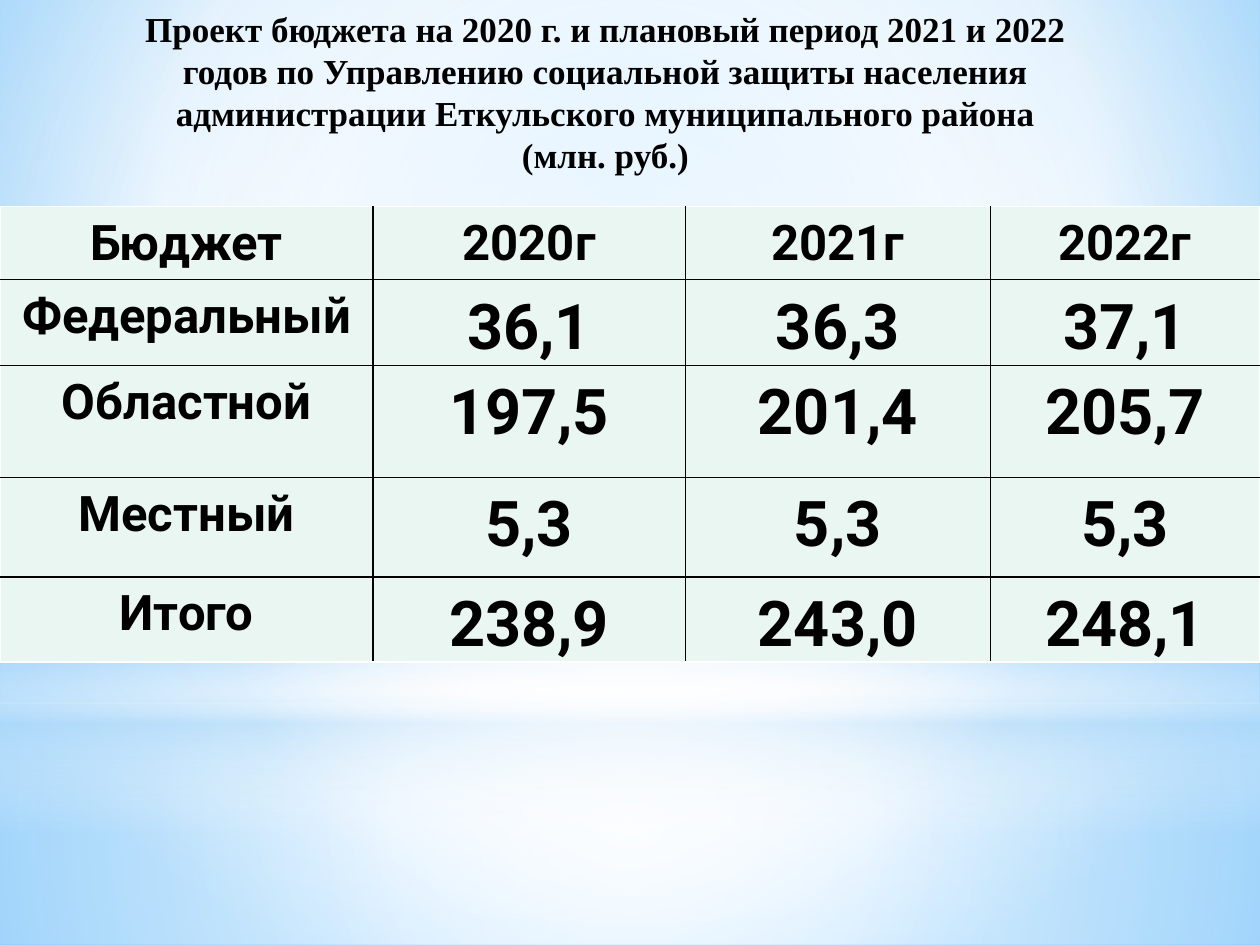
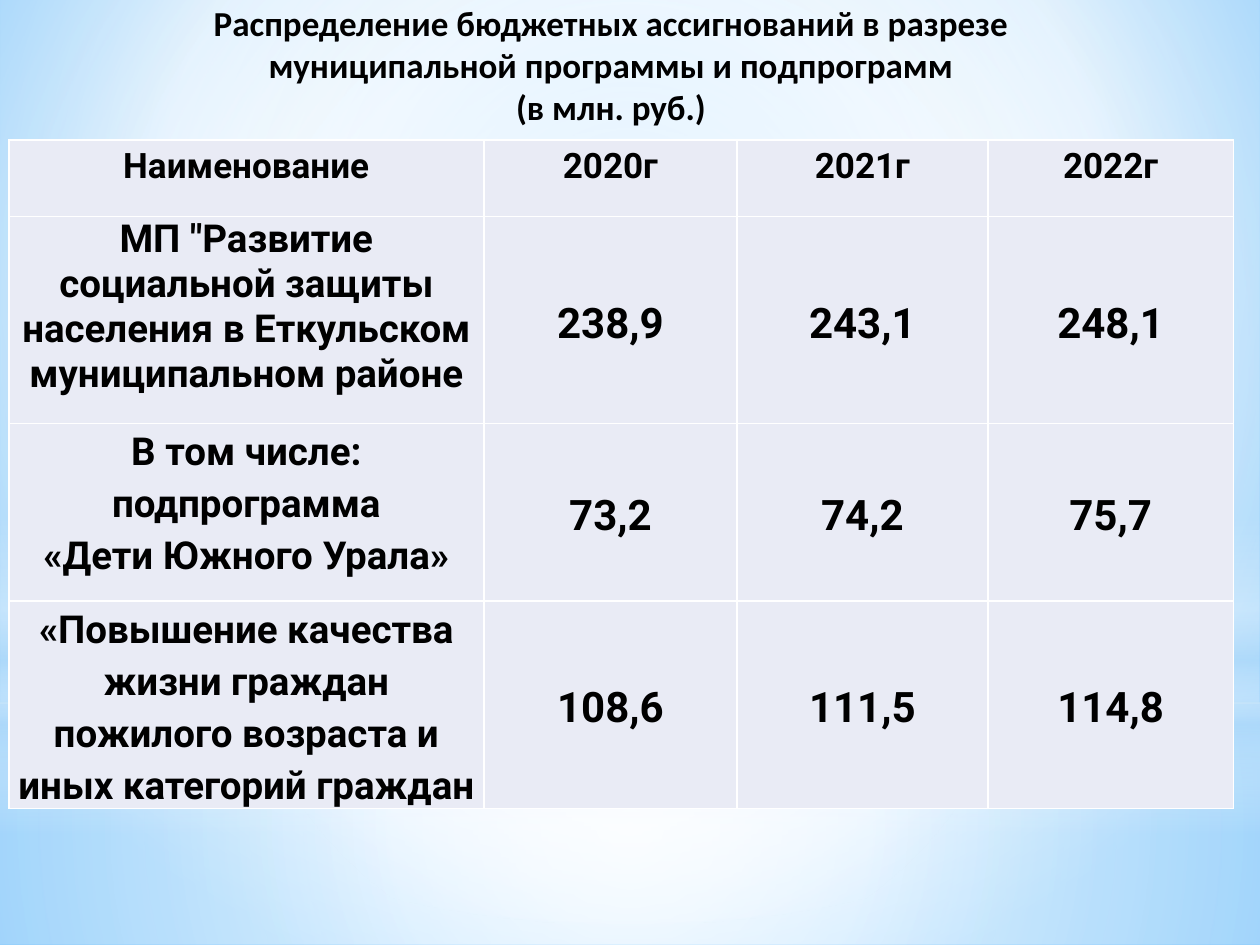
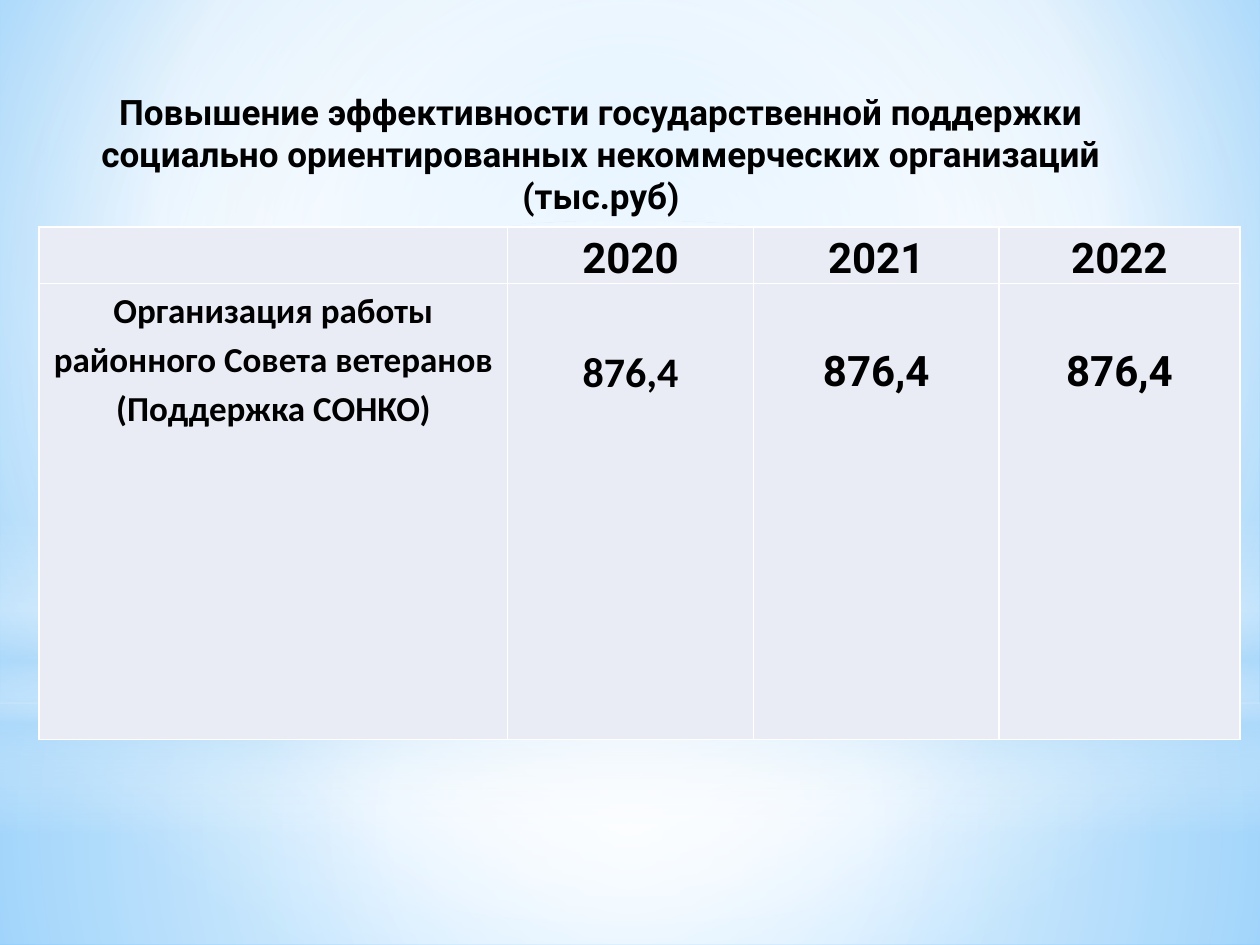
import dataclasses

import pptx
import pptx.dml.color
import pptx.enum.shapes
import pptx.enum.text
import pptx.oxml
import pptx.oxml.ns
import pptx.util

EMU_PER_PX = 9144  # 100 px to the inch
SHAPE = pptx.enum.shapes.MSO_SHAPE
ANCHOR = pptx.enum.text.MSO_ANCHOR
CENTER = pptx.enum.text.PP_ALIGN.CENTER
qn = pptx.oxml.ns.qn


@dataclasses.dataclass(frozen=True)
class Theme:
    black: str = "000000"
    white: str = "FFFFFF"
    sky: str = "B4DCFA"
    sky_light: str = "9ED5FF"
    sky_deep: str = "5BB9FF"
    mint: str = "EAF6F2"
    lavender: str = "E9EBF5"
    serif: str = "Times New Roman"
    sans: str = "Calibri"
    grotesk: str = "Roboto"
    small: int = 20
    label: int = 22
    figure: int = 24
    large: int = 28
    huge: int = 36
    line_spacing: float = 1.15


THEME = Theme()


def px(length):
    return pptx.util.Emu(length * EMU_PER_PX)


def gradient(stops, focus=None):
    """Fill of (position, colour, opacity) stops: round a focus rectangle, or downwards."""
    stop_xml = "".join(
        f'<a:gs pos="{position * 1000}"><a:srgbClr val="{colour}">'
        f'<a:alpha val="{opacity * 1000}"/></a:srgbClr></a:gs>'
        for position, colour, opacity in stops)
    if focus:
        sides = " ".join(f'{side}="{share * 1000}"' for side, share in zip("ltrb", focus))
        direction = f'<a:path path="circle"><a:fillToRect {sides}/></a:path>'
    else:
        direction = '<a:lin ang="5400000" scaled="0"/>'
    return pptx.oxml.parse_xml(
        f'<a:gradFill {pptx.oxml.ns.nsdecls("a")} rotWithShape="1">'
        f'<a:gsLst>{stop_xml}</a:gsLst>{direction}</a:gradFill>')


def replace_no_fill(properties, new_fill):
    properties.replace(properties.find(qn("a:noFill")), new_fill)


def build_backdrop(master, slide):
    """Give the master its sky; the glows are drawn on the slide and moved over."""
    white, sky = THEME.white, THEME.sky
    middle = (50, 50, 50, 50)
    master.background.fill.background()
    replace_no_fill(
        master.element.find(".//" + qn("p:bgPr")),
        gradient([(0, THEME.sky_light, 100), (60, white, 100), (100, THEME.sky_deep, 100)],
                 (20, 10, 20, 60)))
    glows = [
        (SHAPE.RECTANGLE, 558, 192,
         gradient([(0, white, 91), (37, white, 76), (100, sky, 79)], middle)),
        (SHAPE.RECTANGLE, 0, 558,
         gradient([(0, white, 89), (48, white, 62), (100, sky, 79)], middle)),
        (SHAPE.RECTANGLE, 412, 250,
         gradient([(0, white, 0), (29, white, 30), (45, sky, 40),
                   (55, white, 26), (65, sky, 60), (100, white, 0)])),
        (SHAPE.OVAL, 175, 558, gradient([(0, white, 100), (56, white, 0)], middle)),
    ]
    for order, (outline, top, height, glow_fill) in enumerate(glows):
        glow = slide.shapes.add_shape(outline, 0, px(top), px(1000), px(height))
        glow.shadow.inherit = False
        glow.fill.background()
        glow.line.fill.background()
        replace_no_fill(glow.element.spPr, glow_fill)
        glow.element.nvSpPr.cNvPr.set("id", str(100 + order))
        master.shapes.element.insert(2 + order, glow.element)


def write_text(frame, text, font, size, spacing=1.0):
    frame.text = text
    for paragraph in frame.paragraphs:
        paragraph.alignment = CENTER
        paragraph.line_spacing = spacing
        for run in paragraph.runs:
            run.font.name = font
            run.font.size = pptx.util.Pt(size)
            run.font.bold = True
            run.font.color.rgb = pptx.dml.color.RGBColor.from_string(THEME.black)


def set_title(slide, text, place, font, top_inset=5):
    title = slide.shapes.title
    title.left, title.top, title.width, title.height = map(px, place)
    frame = title.text_frame
    frame.auto_size = pptx.enum.text.MSO_AUTO_SIZE.NONE
    frame.word_wrap = True
    frame.vertical_anchor = ANCHOR.MIDDLE
    frame.margin_top = px(top_inset)
    write_text(frame, text, font, THEME.small)


def set_borders(cell, colours):
    """Draw the left, right, top and bottom edges, in that order."""
    properties = cell._tc.get_or_add_tcPr()
    for order, (side, colour) in enumerate(zip("LRTB", colours)):
        properties.insert(order, pptx.oxml.parse_xml(
            f'<a:ln{side} {pptx.oxml.ns.nsdecls("a")} w="12700"><a:solidFill>'
            f'<a:srgbClr val="{colour}"/></a:solidFill></a:ln{side}>'))


def add_budget_table(slide, corner, widths, heights, rows, fill, inner_line, side_inset,
                     header_size, label_size, figure_size):
    table = slide.shapes.add_table(
        len(rows), len(widths), *map(px, (*corner, sum(widths), sum(heights)))).table
    table.first_row = table.horz_banding = False
    for column, width in zip(table.columns, widths):
        column.width = px(width)
    last_row, last_column = len(rows) - 1, len(widths) - 1
    for r, (height, texts) in enumerate(zip(heights, rows)):
        table.rows[r].height = px(height)
        for c, text in enumerate(texts):
            cell = table.cell(r, c)
            cell.margin_left = cell.margin_right = px(side_inset)
            cell.margin_top = cell.margin_bottom = 0
            cell.fill.solid()
            cell.fill.fore_color.rgb = pptx.dml.color.RGBColor.from_string(fill)
            on_edge = (c == 0, c == last_column, r == 0, r == last_row)
            set_borders(cell, [THEME.white if edge else inner_line for edge in on_edge])
            size = header_size if r == 0 else label_size if c == 0 else figure_size
            write_text(cell.text_frame, text, THEME.grotesk, size, THEME.line_spacing)
    return table


def set_font(cell, font):
    for paragraph in cell.text_frame.paragraphs:
        for run in paragraph.runs:
            run.font.name = font


def build_budget(slide):
    set_title(slide,
              "Проект бюджета на 2020 г. и плановый период 2021 и 2022 годов по Управлению "
              "социальной защиты населения администрации Еткульского муниципального района\n"
              "(млн. руб.)", (75, 0, 811, 145), THEME.serif)
    add_budget_table(
        slide, (0, 164), (296, 248, 242, 214), (58, 68, 89, 79, 66),
        [("Бюджет", "2020г", "2021г", "2022г"),
         ("Федеральный", "36,1", "36,3", "37,1"),
         ("Областной", "197,5", "201,4", "205,7"),
         ("Местный", "5,3", "5,3", "5,3"),
         ("Итого", "238,9", "243,0", "248,1")],
        THEME.mint, THEME.black, 7, THEME.large, THEME.large, THEME.huge)


def build_programmes(slide):
    set_title(slide,
              "Распределение бюджетных ассигнований в разрезе\n"
              "муниципальной программы и подпрограмм\n(в млн. руб.)",
              (-9, -4, 988, 111), THEME.sans)
    programmes = add_budget_table(
        slide, (7, 111), (377, 201, 199, 195), (61, 164, 141, 126),
        [("Наименование", "2020г", "2021г", "2022г"),
         ('МП "Развитие социальной защиты населения в Еткульском муниципальном районе',
          "238,9", "243,1", "248,1"),
         ("В том числе:\nподпрограмма\n«Дети Южного Урала»", "73,2", "74,2", "75,7"),
         ("«Повышение качества жизни граждан пожилого возраста и иных категорий граждан",
          "108,6", "111,5", "114,8")],
        THEME.lavender, THEME.white, 3, THEME.small, THEME.label, THEME.figure)
    programmes.cell(1, 0).text_frame.paragraphs[0].line_spacing = 1.0
    for r in range(1, 4):
        for c in range(1, 4):
            programmes.cell(r, c).vertical_anchor = ANCHOR.MIDDLE


def build_veterans_support(slide):
    set_title(slide,
              "Повышение эффективности государственной поддержки\n"
              "социально ориентированных некоммерческих организаций (тыс.руб)",
              (55, 23, 844, 185), THEME.grotesk, top_inset=18)
    support = add_budget_table(
        slide, (31, 180), (372, 195, 195, 191), (39, 362),
        [("", "2020", "2021", "2022"),
         ("Организация работы районного Совета ветеранов\n(Поддержка СОНКО)",
          "876,4", "876,4", "876,4")],
        THEME.lavender, THEME.white, 3, THEME.figure, THEME.small, THEME.figure)
    for c in range(2):
        set_font(support.cell(1, c), THEME.sans)
    for c in range(1, 4):
        support.cell(1, c).margin_top = px(45)


def main():
    deck = pptx.Presentation()
    deck.slide_width, deck.slide_height = px(1000), px(750)
    title_only = deck.slide_layouts.get_by_name("Title Only")
    builders = (build_budget, build_programmes, build_veterans_support)
    slides = [deck.slides.add_slide(title_only) for _ in builders]
    build_backdrop(deck.slide_master, slides[0])
    for build, slide in zip(builders, slides):
        build(slide)
    deck.save("out.pptx")


if __name__ == "__main__":
    main()
